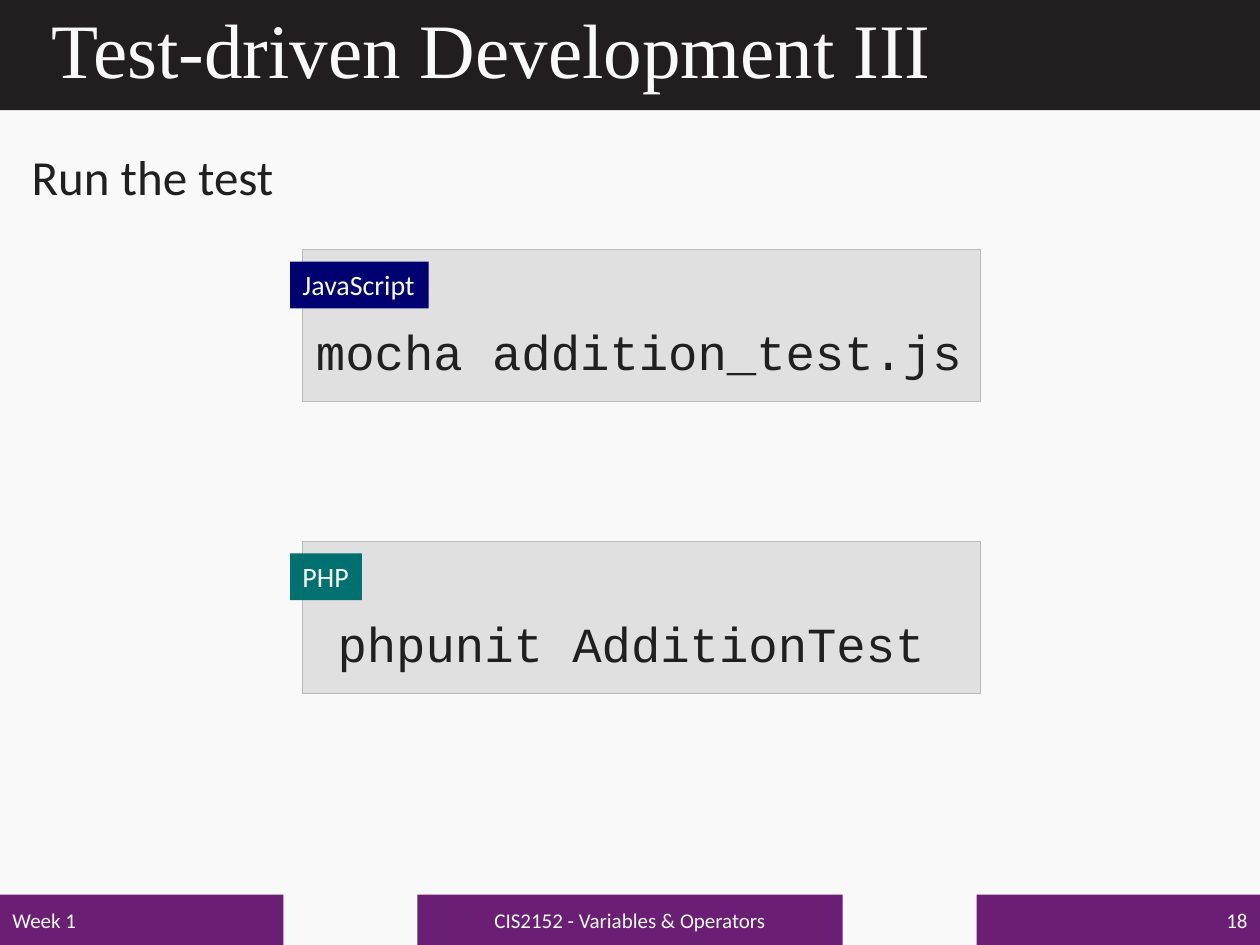
import pptx
import pptx.util
import pptx.dml.color
import pptx.enum.shapes
import pptx.enum.text

Pt = pptx.util.Pt
RGBColor = pptx.dml.color.RGBColor
ALIGN = pptx.enum.text.PP_ALIGN
ANCHOR = pptx.enum.text.MSO_ANCHOR

PAPER = RGBColor(0xF9, 0xF9, 0xF9)
BLACK = RGBColor(0x22, 0x1E, 0x1F)
INK = RGBColor(0x20, 0x20, 0x20)
PURPLE = RGBColor(0x6A, 0x1F, 0x74)
PANEL = RGBColor(0xE0, 0xE0, 0xE0)
BORDER = RGBColor(0xBB, 0xBB, 0xBB)
NAVY = RGBColor(0x00, 0x00, 0x70)
TEAL = RGBColor(0x00, 0x70, 0x70)

TITLE = {"name": "Times New Roman", "size": Pt(44), "color": PAPER}
FOOTER = {"name": "Calibri", "size": Pt(12), "color": PAPER}
TAG = {"name": "Calibri", "size": Pt(16), "color": PAPER}
BODY = {"name": "Calibri", "size": Pt(28), "color": INK}
CODE = {"name": "Courier New", "size": Pt(28), "color": INK}


def add_rect(slide, box, fill, line=None):
    s = slide.shapes.add_shape(
        pptx.enum.shapes.MSO_SHAPE.RECTANGLE, *map(Pt, box))
    s.shadow.inherit = False
    s.fill.solid()
    s.fill.fore_color.rgb = fill
    if line is None:
        s.line.fill.background()
    else:
        s.line.color.rgb = line
        s.line.width = Pt(0.5)
    return s


def add_label(slide, box, text, font, fill=None, align=ALIGN.LEFT,
              anchor=ANCHOR.TOP, wrap=False, spacing=1.0):
    if fill is None:
        s = slide.shapes.add_textbox(*map(Pt, box))
    else:
        s = add_rect(slide, box, fill)
    tf = s.text_frame
    tf.word_wrap = wrap
    tf.vertical_anchor = anchor
    p = tf.paragraphs[0]
    p.alignment = align
    p.line_spacing = spacing
    r = p.add_run()
    r.text = text
    for key, value in font.items():
        if key == "color":
            r.font.color.rgb = value
        else:
            setattr(r.font, key, value)


def add_header(slide, box, title):
    left, top, width, height = box
    add_rect(slide, box, BLACK)
    add_label(slide, (left + 22.3, top, width - 44, height - 1.4), title,
              TITLE, anchor=ANCHOR.MIDDLE, wrap=True, spacing=0.9)


def add_footer(slide, box, week, course, number):
    left, top, width, height = box
    side, middle = 162, 243
    cells = [
        (left, side, week, ALIGN.LEFT),
        (left + (width - middle) / 2, middle, course, ALIGN.CENTER),
        (left + width - side, side, number, ALIGN.RIGHT),
    ]
    for x, w, text, align in cells:
        add_label(slide, (x, top, w, height), text, FOOTER, fill=PURPLE,
                  align=align, anchor=ANCHOR.MIDDLE, wrap=True)


def add_command(slide, box, language, tag_width, tag_fill,
                command, indent, command_width):
    left, top, width, height = box
    add_rect(slide, box, PANEL, BORDER)
    add_label(slide, (left + indent, top + 37.4, command_width, 41.2),
              command, CODE)
    add_label(slide, (left - 7.2, top + 6.9, tag_width, 26.7),
              language, TAG, fill=tag_fill)


def main():
    prs = pptx.Presentation()
    prs.slide_width, prs.slide_height = Pt(720), Pt(540)
    slide = prs.slides.add_slide(prs.slide_layouts[6])
    slide.background.fill.solid()
    slide.background.fill.fore_color.rgb = PAPER

    add_header(slide, (0, 0, 720, 63), "Test-driven Development III")
    add_label(slide, (11, 80, 154, 41.2), "Run the test", BODY)
    add_command(slide, (173, 142.6, 387.2, 86.8), "JavaScript", 79.2, NAVY,
                "mocha addition_test.js", 0.5, 386.6)
    add_command(slide, (173, 309.4, 387.2, 86.8), "PHP", 41, TEAL,
                "phpunit AdditionTest", 12.8, 352.8)
    add_footer(slide, (0, 511.2, 720, 28.8), "Week 1",
               "CIS2152 - Variables & Operators", "18")
    prs.save("out.pptx")


if __name__ == "__main__":
    main()
